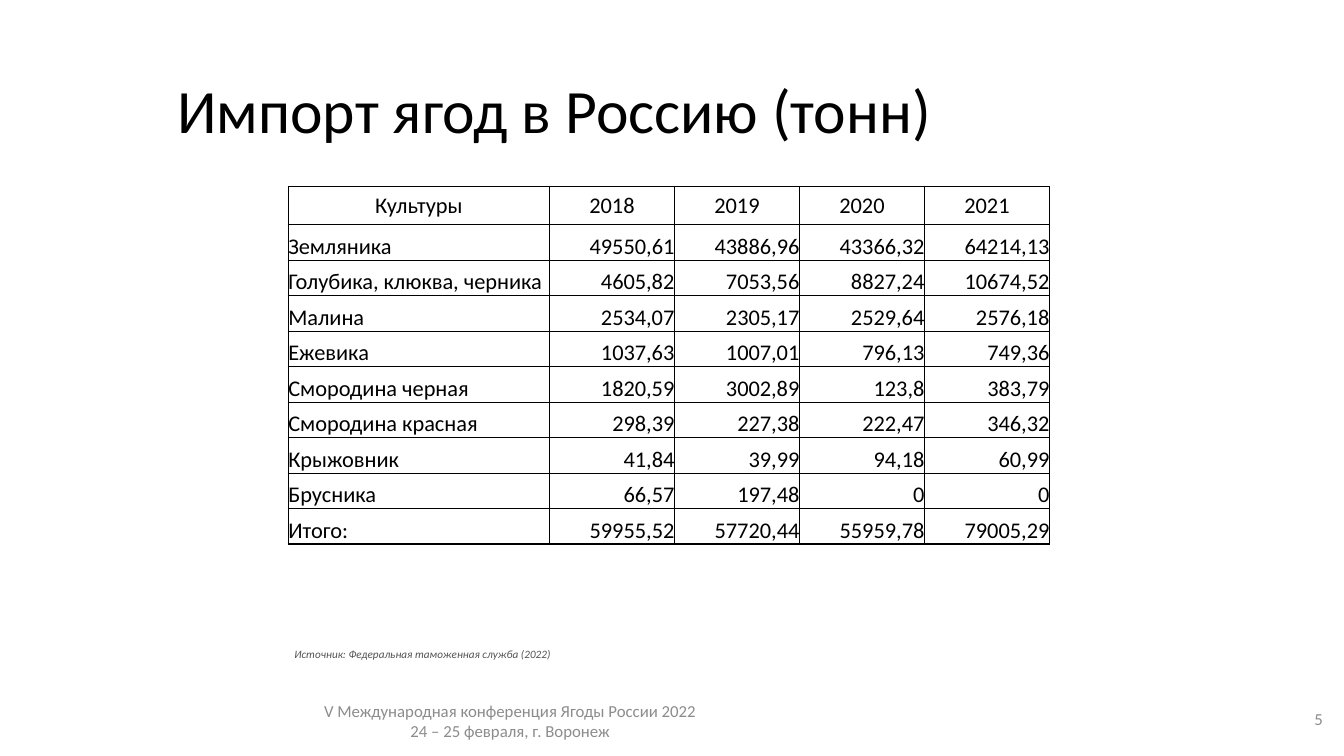
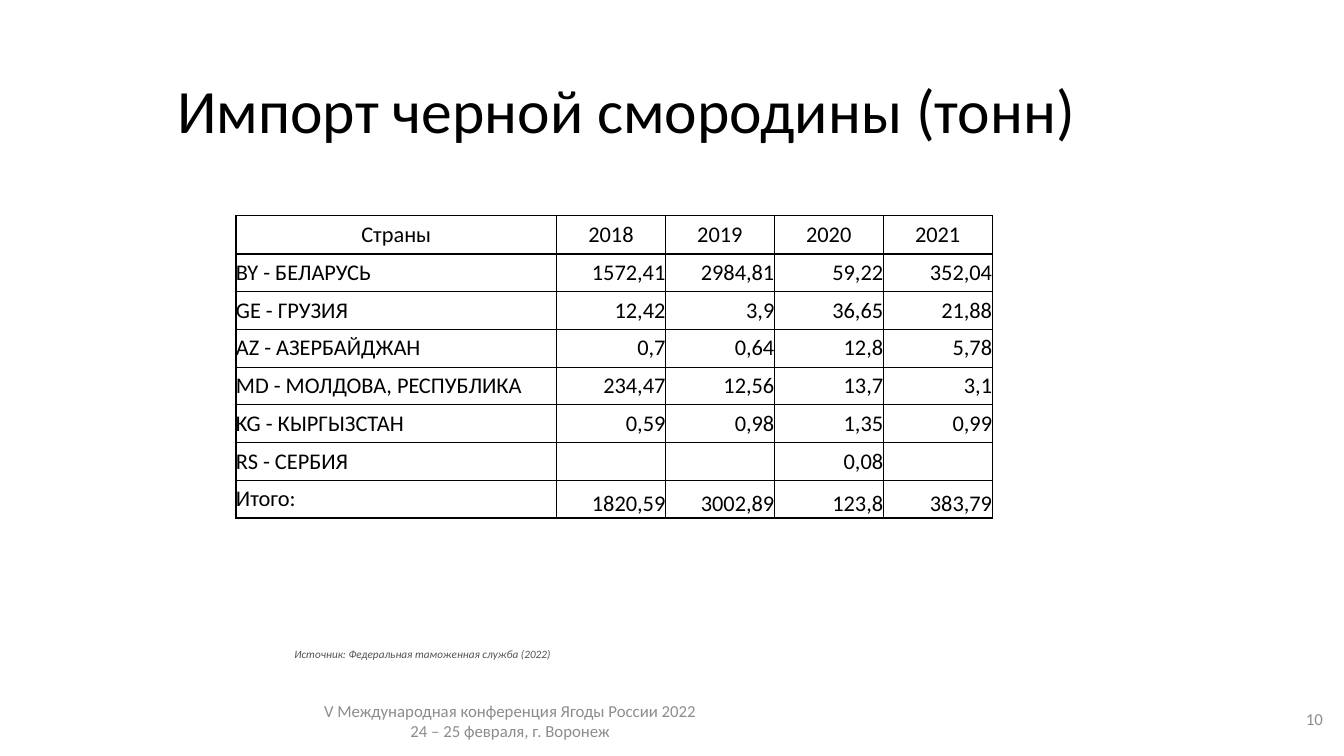
"""Build two slides with tables of berry imports to Russia."""
import pptx
import pptx.dml.color
import pptx.enum.text
import pptx.oxml
import pptx.oxml.ns
import pptx.util

Inches = pptx.util.Inches
Pt = pptx.util.Pt
RGBColor = pptx.dml.color.RGBColor
ALIGN = pptx.enum.text.PP_ALIGN
ANCHOR = pptx.enum.text.MSO_ANCHOR

BLACK = RGBColor(0x00, 0x00, 0x00)
FOOTER_GRAY = RGBColor(0x8C, 0x8C, 0x8C)
SOURCE_GRAY = RGBColor(0x53, 0x53, 0x53)
FONT = "Calibri"
YEARS = ("2018", "2019", "2020", "2021")
HEADER_HEIGHT = 0.38

FOOTER = ("V Международная конференция Ягоды России 2022", "24 – 25 февраля, г. Воронеж")
SOURCE = "Источник: Федеральная таможенная служба (2022)"

SLIDES = [
    {
        "title": "Импорт ягод в Россию (тонн)",
        "number": "5",
        "frame": (2.86, 1.85, 7.55, 3.55),
        "label_width": 2.59,
        "label_anchor": ANCHOR.BOTTOM,
        "value_anchor": ANCHOR.BOTTOM,
        "rows": [
            ("Культуры", *YEARS),
            ("Земляника", "49550,61", "43886,96", "43366,32", "64214,13"),
            ("Голубика, клюква, черника", "4605,82", "7053,56", "8827,24", "10674,52"),
            ("Малина", "2534,07", "2305,17", "2529,64", "2576,18"),
            ("Ежевика", "1037,63", "1007,01", "796,13", "749,36"),
            ("Смородина черная", "1820,59", "3002,89", "123,8", "383,79"),
            ("Смородина красная", "298,39", "227,38", "222,47", "346,32"),
            ("Крыжовник", "41,84", "39,99", "94,18", "60,99"),
            ("Брусника", "66,57", "197,48", "0", "0"),
            ("Итого:", "59955,52", "57720,44", "55959,78", "79005,29"),
        ],
    },
    {
        "title": "Импорт черной смородины (тонн)",
        "number": "10",
        "frame": (2.34, 2.14, 7.5, 3),
        "label_width": 3.18,
        "label_anchor": ANCHOR.MIDDLE,
        "value_anchor": ANCHOR.MIDDLE,
        "rows": [
            ("Страны", *YEARS),
            ("BY - БЕЛАРУСЬ", "1572,41", "2984,81", "59,22", "352,04"),
            ("GE - ГРУЗИЯ", "12,42", "3,9", "36,65", "21,88"),
            ("AZ - АЗЕРБАЙДЖАН", "0,7", "0,64", "12,8", "5,78"),
            ("MD - МОЛДОВА, РЕСПУБЛИКА", "234,47", "12,56", "13,7", "3,1"),
            ("KG - КЫРГЫЗСТАН", "0,59", "0,98", "1,35", "0,99"),
            ("RS - СЕРБИЯ", "", "", "0,08", ""),
            ("Итого:", "1820,59", "3002,89", "123,8", "383,79"),
        ],
    },
]


def add_run(paragraph, text, size, color, italic=False):
    run = paragraph.add_run()
    run.text = text
    run.font.name = FONT
    run.font.size = Pt(size)
    run.font.color.rgb = color
    run.font.italic = italic


def set_margins(target, margin):
    target.margin_left = target.margin_right = Inches(margin)
    target.margin_top = target.margin_bottom = Inches(margin)


def add_text(slide, frame, lines, size, color, alignment=ALIGN.LEFT, anchor=ANCHOR.MIDDLE,
             italic=False, line_spacing=None, margin=None):
    text_frame = slide.shapes.add_textbox(*map(Inches, frame)).text_frame
    text_frame.word_wrap = True
    text_frame.vertical_anchor = anchor
    if margin is not None:
        set_margins(text_frame, margin)
    for index, line in enumerate(lines):
        paragraph = text_frame.add_paragraph() if index else text_frame.paragraphs[0]
        paragraph.alignment = alignment
        paragraph.line_spacing = line_spacing
        add_run(paragraph, line, size, color, italic)


def add_borders(cell):
    properties = cell._tc.get_or_add_tcPr()
    for side in ("lnL", "lnR", "lnT", "lnB"):
        properties.append(pptx.oxml.parse_xml(
            f'<a:{side} {pptx.oxml.ns.nsdecls("a")} w="{Pt(1)}"><a:solidFill>'
            f'<a:srgbClr val="{BLACK}"/></a:solidFill></a:{side}>'))


def cell_layout(content, row, column):
    if row == 0:
        return ALIGN.CENTER, ANCHOR.MIDDLE
    if column == 0:
        return ALIGN.LEFT, content["label_anchor"]
    is_total = row == len(content["rows"]) - 1
    return ALIGN.RIGHT, ANCHOR.BOTTOM if is_total else content["value_anchor"]


def add_import_table(slide, content):
    rows = content["rows"]
    width, height = content["frame"][2:]
    table = slide.shapes.add_table(
        len(rows), len(rows[0]), *map(Inches, content["frame"])).table
    table.first_row = table.horz_banding = False
    label_width = content["label_width"]
    for index, column in enumerate(table.columns):
        column.width = Inches((width - label_width) / len(YEARS) if index else label_width)
    for index, row in enumerate(table.rows):
        row.height = Inches((height - HEADER_HEIGHT) / (len(rows) - 1) if index else HEADER_HEIGHT)
    for row_index, values in enumerate(rows):
        for column_index, value in enumerate(values):
            cell = table.cell(row_index, column_index)
            add_borders(cell)
            cell.fill.background()
            set_margins(cell, 0)
            paragraph = cell.text_frame.paragraphs[0]
            paragraph.alignment, cell.vertical_anchor = cell_layout(
                content, row_index, column_index)
            if value:
                add_run(paragraph, value, 16, BLACK)


def add_slide(presentation, content):
    slide = presentation.slides.add_slide(presentation.slide_layouts[6])
    add_text(slide, (1.66, 0.4, 10.1, 1.45), [content["title"]], 44, BLACK, line_spacing=0.9)
    add_import_table(slide, content)
    add_text(slide, (2.86, 6.36, 4.17, 0.36), [SOURCE], 8, SOURCE_GRAY,
             anchor=ANCHOR.TOP, italic=True, margin=0.06)
    add_text(slide, (2.12, 6.95, 5.88, 0.4), FOOTER, 12, FOOTER_GRAY, ALIGN.CENTER)
    add_text(slide, (12.42, 6.93, 0.8, 0.4), [content["number"]], 12, FOOTER_GRAY, ALIGN.RIGHT)


def main():
    presentation = pptx.Presentation()
    presentation.slide_width = Inches(13.33)
    presentation.slide_height = Inches(7.5)
    for content in SLIDES:
        add_slide(presentation, content)
    presentation.save("out.pptx")


if __name__ == "__main__":
    main()
